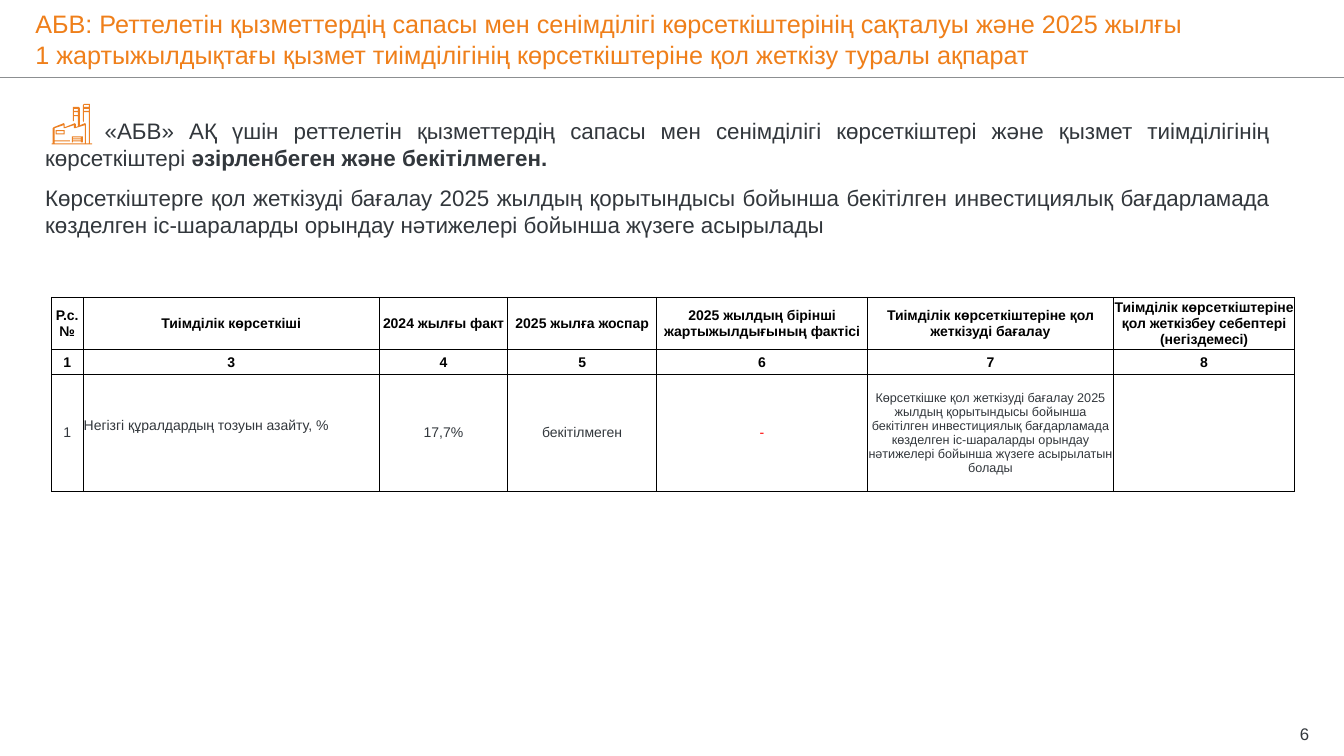
from lxml.etree import SubElement
from pptx import Presentation
from pptx.dml.color import RGBColor
from pptx.enum.shapes import MSO_CONNECTOR
from pptx.enum.text import MSO_ANCHOR, PP_ALIGN
from pptx.oxml.ns import qn
from pptx.util import Cm, Pt

ORANGE = RGBColor(0xEF, 0x7F, 0x1A)
ICON_ORANGE = RGBColor(0xEC, 0x80, 0x23)
DARK = RGBColor(0x32, 0x37, 0x3C)
GREY = RGBColor(0x8C, 0x8F, 0x91)
RED = RGBColor(0xFF, 0x00, 0x00)
BLACK = RGBColor(0x00, 0x00, 0x00)

SLIDE_WIDTH, SLIDE_HEIGHT = Cm(33.87), Cm(19.05)
TITLE = ("АБВ: Реттелетін қызметтердің сапасы мен сенімділігі көрсеткіштерінің сақталуы және "
         "2025 жылғы 1 жартыжылдықтағы қызмет тиімділігінің көрсеткіштеріне қол жеткізу туралы ақпарат")
INTRO = [
    ("«АБВ» АҚ үшін реттелетін қызметтердің сапасы мен сенімділігі көрсеткіштері және "
     "қызмет тиімділігінің көрсеткіштері ", False),
    ("әзірленбеген және бекітілмеген.", True),
]
ASSESSMENT = [
    ("Көрсеткіштерге қол жеткізуді бағалау 2025 жылдың қорытындысы бойынша бекітілген "
     "инвестициялық бағдарламада көзделген іс-шараларды орындау нәтижелері бойынша "
     "жүзеге асырылады", False),
]
ROWS = [
    ["Р.с.№", "Тиімділік көрсеткіші", "2024 жылғы факт", "2025 жылға жоспар",
     "2025 жылдың бірінші жартыжылдығының фактісі",
     "Тиімділік көрсеткіштеріне қол жеткізуді бағалау",
     "Тиімділік көрсеткіштеріне қол жеткізбеу себептері (негіздемесі)"],
    ["1", "3", "4", "5", "6", "7", "8"],
    ["1", "Негізгі құралдардың тозуын азайту, %", "17,7%", "бекітілмеген", "-",
     "Көрсеткішке қол жеткізуді бағалау 2025 жылдың қорытындысы бойынша бекітілген "
     "инвестициялық бағдарламада көзделген іс-шараларды орындау нәтижелері бойынша "
     "жүзеге асырылатын болады", ""],
]
COLUMN_WIDTHS = [0.79, 7.47, 3.23, 3.76, 5.31, 6.2, 4.57]
ROW_HEIGHTS = [1.31, 0.64, 2.93]
NAME_COLUMN, FACT_COLUMN, ASSESSMENT_COLUMN = 1, 4, 5

# Icon contours on a 40 by 40 grid; inner contours are holes.
FACTORY = [
    [(39, 39), (38, 39), (38, 0), (32, 0), (31, 1), (31, 17), (32, 18), (32, 8), (37, 8),
     (37, 39), (34, 39), (34, 20), (33, 19), (28, 21), (28, 4), (27, 3), (21, 3), (21, 17),
     (22, 17), (22, 12), (26, 12), (26, 22), (24, 23), (24, 20), (23, 19), (13, 23), (13, 20),
     (12, 19), (2, 23), (1, 24), (1, 39), (0, 39), (0, 40), (40, 40), (40, 39)],
    [(37, 1), (37, 3), (32, 3), (32, 1)],
    [(32, 7), (32, 5), (37, 5), (37, 7)],
    [(26, 5), (26, 7), (22, 7), (22, 5)],
    [(22, 11), (22, 8), (26, 8), (26, 11)],
    [(12, 21), (12, 24), (13, 24), (22, 21), (22, 24), (23, 24), (33, 21), (33, 39), (3, 39),
     (3, 37), (18, 37), (18, 36), (3, 36), (3, 24)],
]
WINDOW = [
    [(4, 26), (13, 26), (13, 30), (4, 30)],
    [(5, 27), (12, 27), (12, 29), (5, 29)],
]
GATE = [
    [(20, 32), (31, 32), (31, 38), (29, 38), (29, 37), (21, 37), (21, 38), (20, 38)],
    [(21, 36), (21, 35), (29, 35), (29, 36)],
    [(29, 33), (29, 34), (21, 34), (21, 33)],
]


def style(font, size, color, bold=False):
    font.name, font.size, font.bold = "Arial", Pt(size), bold
    font.color.rgb = color


def add_line_of_text(slide, left, top, width, height, text, size, color, align):
    """Place a box without insets, its text centred vertically."""
    frame = slide.shapes.add_textbox(left, top, width, height).text_frame
    frame.word_wrap = True
    frame.vertical_anchor = MSO_ANCHOR.MIDDLE
    frame.margin_left = frame.margin_right = frame.margin_top = frame.margin_bottom = 0
    frame.text = text
    para = frame.paragraphs[0]
    para.alignment = align
    style(para.runs[0].font, size, color)


def add_header(slide, width, height):
    add_line_of_text(slide, Cm(0.89), 0, width - Cm(4.48), height, TITLE, 18, ORANGE,
                     PP_ALIGN.LEFT)
    rule = slide.shapes.add_connector(MSO_CONNECTOR.STRAIGHT, 0, height, width, height)
    rule.line.color.rgb = GREY
    rule.line.width = Pt(0.75)
    SubElement(rule._element.spPr, qn("a:effectLst"))


def add_body_text(slide, left, top, width, height, spans, first_indent=0):
    frame = slide.shapes.add_textbox(left, top, width, height).text_frame
    frame.word_wrap = True
    para = frame.paragraphs[0]
    para.alignment = PP_ALIGN.JUSTIFY
    para._p.get_or_add_pPr().set("indent", str(first_indent))
    for text, bold in spans:
        span = para.add_run()
        span.text = text
        style(span.font, 16, DARK, bold)


def add_factory_icon(slide, left, top, size):
    for contours in (FACTORY, WINDOW, GATE):
        builder = slide.shapes.build_freeform(*contours[0][0], scale=size / 40)
        builder.add_line_segments(contours[0][1:], close=True)
        for hole in contours[1:]:
            builder.move_to(*hole[0])
            builder.add_line_segments(hole[1:], close=True)
        part = builder.convert_to_shape(left, top)
        part.shadow.inherit = False
        part.fill.solid()
        part.fill.fore_color.rgb = ICON_ORANGE
        part.line.fill.background()


def add_borders(cell):
    properties = cell._tc.get_or_add_tcPr()
    for position, side in enumerate(("a:lnL", "a:lnR", "a:lnT", "a:lnB")):
        border = SubElement(properties, qn(side), w=str(Pt(0.5)))
        fill = SubElement(border, qn("a:solidFill"))
        SubElement(fill, qn("a:srgbClr"), val=str(BLACK))
        properties.insert(position, border)


def fill_cell(cell, text, row, column):
    is_header = row < 2
    is_name = not is_header and column == NAME_COLUMN
    cell.fill.background()
    add_borders(cell)
    cell.vertical_anchor = MSO_ANCHOR.MIDDLE
    cell.margin_left = cell.margin_right = cell.margin_top = Cm(0.02)
    cell.margin_bottom = Cm(0.4) if is_name else 0
    cell.text = text
    para = cell.text_frame.paragraphs[0]
    para.alignment = PP_ALIGN.LEFT if is_name else PP_ALIGN.CENTER
    size, color = 10, BLACK if is_header else DARK
    if not is_header and column == FACT_COLUMN:
        color = RED
    if not is_header and column == ASSESSMENT_COLUMN:
        size = 9
    style(para.font, size, color, is_header)
    for span in para.runs:
        style(span.font, size, color, is_header)


def add_indicator_table(slide, left, top):
    table = slide.shapes.add_table(len(ROWS), len(COLUMN_WIDTHS), left, top,
                                   Cm(sum(COLUMN_WIDTHS)), Cm(sum(ROW_HEIGHTS))).table
    table.first_row = table.horz_banding = False
    for column, width in zip(table.columns, COLUMN_WIDTHS):
        column.width = Cm(width)
    for row, height in zip(table.rows, ROW_HEIGHTS):
        row.height = Cm(height)
    for row, texts in enumerate(ROWS):
        for column, text in enumerate(texts):
            fill_cell(table.cell(row, column), text, row, column)


def main():
    deck = Presentation()
    deck.slide_width, deck.slide_height = SLIDE_WIDTH, SLIDE_HEIGHT
    slide = deck.slides.add_slide(deck.slide_layouts[6])
    add_header(slide, SLIDE_WIDTH, Cm(1.96))
    add_body_text(slide, Cm(0.89), Cm(2.82), Cm(31.37), Cm(1.63), INTRO, Cm(1.5))
    add_body_text(slide, Cm(0.89), Cm(4.52), Cm(31.37), Cm(1.63), ASSESSMENT)
    add_factory_icon(slide, Cm(1.3), Cm(2.62), Cm(1.02))
    add_indicator_table(slide, Cm(1.3), Cm(7.49))
    add_line_of_text(slide, Cm(31.72), Cm(18.16), Cm(1.27), Cm(0.64), "6", 12, DARK,
                     PP_ALIGN.RIGHT)
    deck.save("out.pptx")


if __name__ == "__main__":
    main()
